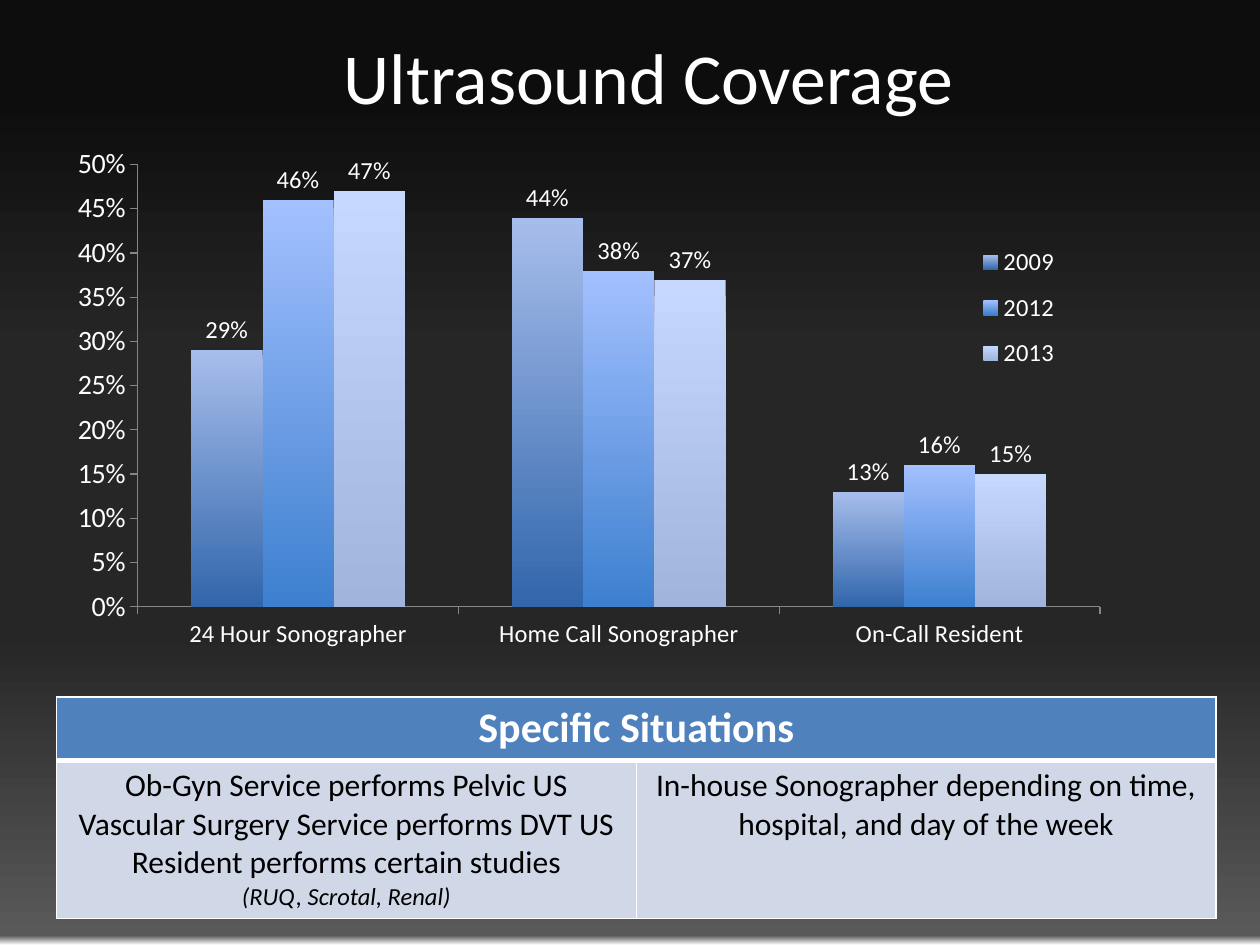
import pptx
import pptx.util
from dataclasses import dataclass
from lxml import etree
from pptx.chart.data import CategoryChartData
from pptx.dml.color import RGBColor
from pptx.enum.chart import (XL_CHART_TYPE, XL_LABEL_POSITION,
                             XL_LEGEND_POSITION, XL_TICK_MARK)
from pptx.enum.text import MSO_ANCHOR, MSO_AUTO_SIZE, PP_ALIGN
from pptx.oxml import parse_xml
from pptx.oxml.ns import nsdecls, qn
from pptx.util import Inches, Pt


@dataclass(frozen=True)
class Theme:
    font: str = "Calibri"
    white: str = "FFFFFF"
    black: str = "000000"
    axis: str = "868686"
    header: str = "4F81BD"
    cell: str = "D0D8E8"
    # Background stops: position in percent, colour
    backdrop: tuple = ((10, "0D0D0D"), (37, "262626"), (67, "262626"),
                       (99, "595959"), (100, "FFFFFF"))
    # Top and bottom colour of each series
    bars: tuple = (("A7BDEC", "3166AB"), ("A3C0FF", "3D80CF"),
                   ("C7D8FF", "A0B4DC"))
    title_size: int = 41
    header_size: int = 24
    body_size: int = 18
    value_size: int = 16
    label_size: int = 14


T = Theme()

CATEGORIES = ("24 Hour Sonographer", "Home Call Sonographer", "On-Call Resident")
COVERAGE = {"2009": (0.29, 0.44, 0.13),
            "2012": (0.46, 0.38, 0.16),
            "2013": (0.47, 0.37, 0.15)}


def style_font(font, size, color, bold=False, italic=False):
    font.name, font.size = T.font, Pt(size)
    font.bold, font.italic = bold, italic
    font.color.rgb = RGBColor.from_string(color)


def add_run(p, text, size, color, **style):
    p.alignment = PP_ALIGN.CENTER
    r = p.add_run()
    r.text = text
    style_font(r.font, size, color, **style)


def set_background(s):
    fill = s.background.fill
    fill.gradient()
    fill.gradient_angle = 270
    stops = s.element.find(".//" + qn("a:gsLst"))
    for stop in list(stops):
        stops.remove(stop)
    for percent, color in T.backdrop:
        stop = etree.SubElement(stops, qn("a:gs"), pos=str(percent * 1000))
        etree.SubElement(stop, qn("a:srgbClr"), val=color)


def add_title(s, text):
    sp = s.shapes.title
    sp.left, sp.top, sp.width, sp.height = map(Inches, (0.65, 0.16, 9, 0.89))
    tf = sp.text_frame
    tf.auto_size = MSO_AUTO_SIZE.NONE
    tf.vertical_anchor = MSO_ANCHOR.MIDDLE
    add_run(tf.paragraphs[0], text, T.title_size, T.white)


def place(parent, x, y, w, h, inner=False):
    """Fix a chart part at fractions of the chart's size."""
    target = '<c:layoutTarget val="inner"/>' if inner else ""
    parts = "".join(f'<c:{side}Mode val="edge"/>' for side in "xy")
    parts += "".join(f'<c:{k} val="{v}"/>'
                     for k, v in zip("xywh", (x, y, w, h)))
    layout = parse_xml(f'<c:layout {nsdecls("c")}><c:manualLayout>'
                       f'{target}{parts}</c:manualLayout></c:layout>')
    for old in parent.findall(qn("c:layout")):
        parent.remove(old)
    # The layout follows the legend position, or comes first in the plot area
    before = parent.find(qn("c:legendPos"))
    if before is None:
        parent.insert(0, layout)
    else:
        before.addnext(layout)


def style_axis(axis, size):
    axis.has_major_gridlines = False
    axis.major_tick_mark = XL_TICK_MARK.OUTSIDE
    axis.minor_tick_mark = XL_TICK_MARK.NONE
    axis.format.line.color.rgb = RGBColor.from_string(T.axis)
    axis.format.line.width = Pt(0.75)
    style_font(axis.tick_labels.font, size, T.white)


def style_series(series, colors):
    fill = series.format.fill
    fill.gradient()
    fill.gradient_angle = 270
    for stop, color, position in zip(fill.gradient_stops, colors, (0, 1)):
        stop.color.rgb = RGBColor.from_string(color)
        stop.position = position
    labels = series.data_labels
    labels.show_value = True
    labels.number_format, labels.number_format_is_linked = "0%", False
    labels.position = XL_LABEL_POSITION.OUTSIDE_END
    style_font(labels.font, T.label_size, T.white)


def add_coverage_chart(s):
    data = CategoryChartData(number_format="0%")
    data.categories = CATEGORIES
    for year, values in COVERAGE.items():
        data.add_series(year, values)
    chart = s.shapes.add_chart(XL_CHART_TYPE.COLUMN_CLUSTERED, Inches(0.45),
                               Inches(1.1), Inches(9.2), Inches(4.13), data).chart
    chart.has_title = False
    style_font(chart.font, T.label_size, T.white)

    # Axes
    style_axis(chart.category_axis, T.label_size)
    axis = chart.value_axis
    style_axis(axis, T.value_size)
    axis.minimum_scale, axis.maximum_scale, axis.major_unit = 0, 0.5, 0.05
    axis.tick_labels.number_format = "0%"
    axis.tick_labels.number_format_is_linked = False

    # Columns
    plot = chart.plots[0]
    plot.gap_width, plot.overlap, plot.vary_by_categories = 150, 0, False
    for series, colors in zip(plot.series, T.bars):
        style_series(series, colors)

    # Legend over the free corner of the plot
    chart.has_legend = True
    chart.legend.position = XL_LEGEND_POSITION.RIGHT
    chart.legend.include_in_layout = False
    style_font(chart.legend.font, T.label_size, T.white)
    root = chart.element
    place(root.find(".//" + qn("c:plotArea")), 0.07, 0.05, 0.83, 0.85, inner=True)
    place(root.find(".//" + qn("c:legend")), 0.78, 0.18, 0.1, 0.29)


def style_cell(cell, color, bottom=1):
    # Borders come before the fill in the cell properties
    tc_pr = cell._tc.get_or_add_tcPr()
    for side, width in (("L", 1), ("R", 1), ("T", 1), ("B", bottom)):
        line = etree.SubElement(tc_pr, qn(f"a:ln{side}"), w=str(Pt(width)))
        fill = etree.SubElement(line, qn("a:solidFill"))
        etree.SubElement(fill, qn("a:srgbClr"), val=T.white)
    cell.fill.solid()
    cell.fill.fore_color.rgb = RGBColor.from_string(color)


def add_situations_table(s):
    table = s.shapes.add_table(2, 2, Inches(0.45), Inches(5.53),
                               Inches(9.2), Inches(1.73)).table
    for row, height in zip(table.rows, (0.5, 1.23)):
        row.height = Inches(height)
    for col in range(2):
        style_cell(table.cell(0, col), T.header, bottom=3)
        style_cell(table.cell(1, col), T.cell)

    # Heading across both columns
    head = table.cell(0, 0)
    head.merge(table.cell(0, 1))
    add_run(head.text_frame.paragraphs[0], "Specific Situations",
            T.header_size, T.white, bold=True)

    # Situations
    columns = (("Ob-Gyn Service performs Pelvic US",
                "Vascular Surgery Service performs DVT US",
                "Resident performs certain studies"),
               ("In-house Sonographer depending on time, "
                "hospital, and day of the week",))
    for col, lines in enumerate(columns):
        tf = table.cell(1, col).text_frame
        for i, line in enumerate(lines):
            p = tf.add_paragraph() if i else tf.paragraphs[0]
            add_run(p, line, T.body_size, T.black)
    p = table.cell(1, 0).text_frame.paragraphs[-1]
    p.add_line_break()
    add_run(p, "(RUQ, Scrotal, Renal)", T.label_size, T.black, italic=True)


def main():
    prs = pptx.Presentation()
    prs.slide_width, prs.slide_height = Inches(10), Inches(7.5)
    s = prs.slides.add_slide(prs.slide_layouts[5])
    set_background(s)
    add_title(s, "Ultrasound Coverage")
    add_situations_table(s)
    add_coverage_chart(s)
    prs.save("out.pptx")


if __name__ == "__main__":
    main()
